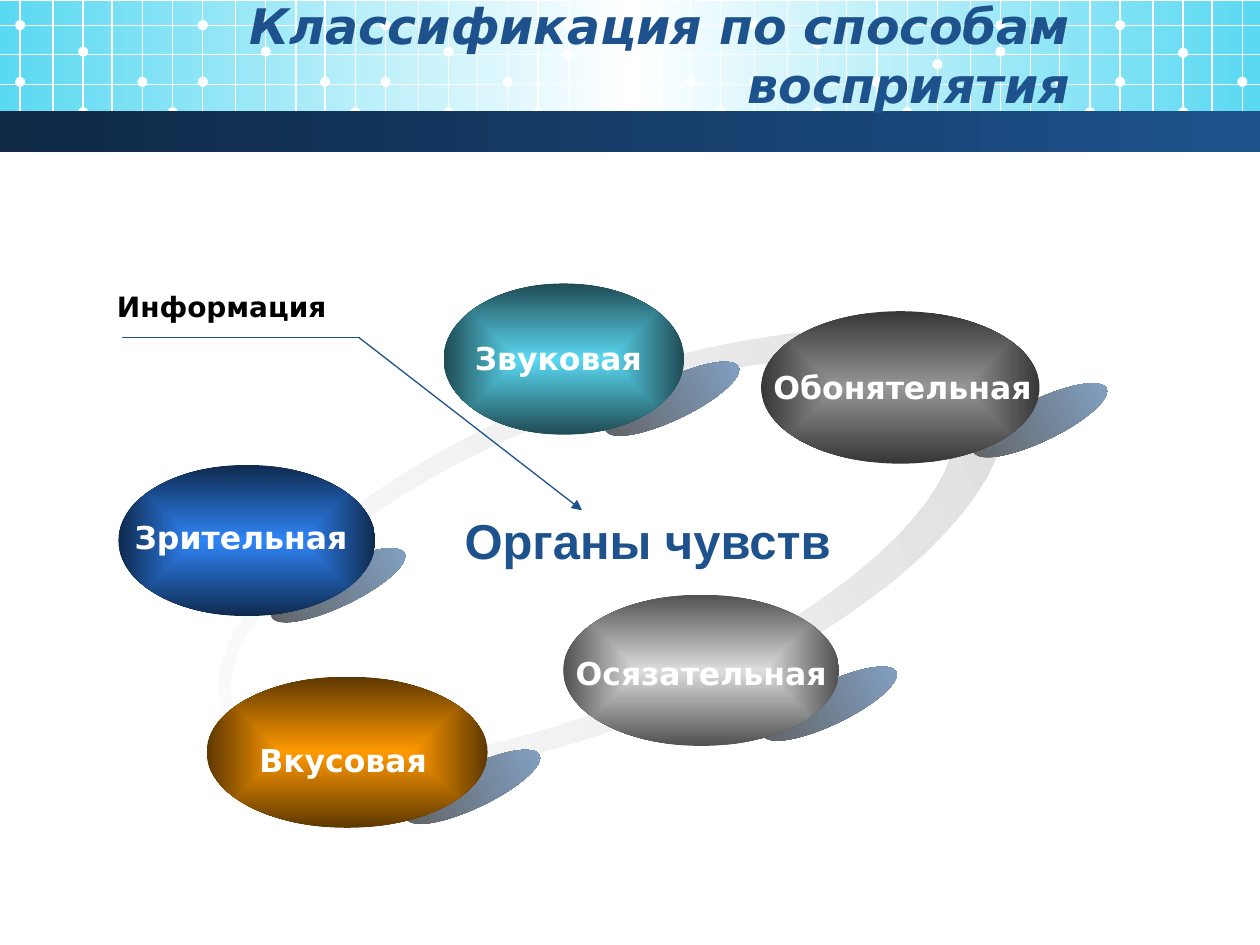
import math
from pptx import Presentation
from pptx.dml.color import RGBColor
from pptx.enum.shapes import MSO_CONNECTOR, MSO_SHAPE
from pptx.enum.text import MSO_ANCHOR, MSO_AUTO_SIZE, PP_ALIGN
from pptx.oxml.ns import qn
from pptx.util import Inches, Pt
from lxml import etree

OVAL, RECTANGLE = MSO_SHAPE.OVAL, MSO_SHAPE.RECTANGLE
STRAIGHT = MSO_CONNECTOR.STRAIGHT
LEFT, CENTER, RIGHT = PP_ALIGN.LEFT, PP_ALIGN.CENTER, PP_ALIGN.RIGHT
TOP, MIDDLE = MSO_ANCHOR.TOP, MSO_ANCHOR.MIDDLE
NO_FIT = MSO_AUTO_SIZE.NONE

WHITE = RGBColor(0xFF, 0xFF, 0xFF)
BLACK = RGBColor(0x00, 0x00, 0x00)
NAVY = RGBColor(0x1D, 0x52, 0x8D)
CYAN = RGBColor(0x5A, 0xD9, 0xF2)
BLUE = RGBColor(0x2F, 0x85, 0xF7)
ORANGE = RGBColor(0xFF, 0x99, 0x00)
SILVER = RGBColor(0xDD, 0xDD, 0xDD)
GRAY = RGBColor(0x96, 0x96, 0x96)
PALE = RGBColor(0xF5, 0xF5, 0xF5)
SHADOW_DARK = RGBColor(0x5F, 0x5F, 0x5F)
SHADOW_LIGHT = RGBColor(0x84, 0xA5, 0xCA)

TITLE = "Классификация по способам восприятия"
CENTER_LABEL = "Органы чувств"
SOURCE_LABEL = "Информация"
SENSES = [
    ("Звуковая", CYAN, 35, (3.52, 2.25, 1.91, 1.2), (3.67, 2.64, 1.57, 0.4), (4.75, 3)),
    ("Зрительная", BLUE, 32, (0.94, 3.69, 2.04, 1.2), (0.97, 4.06, 1.91, 0.4), (2.1, 4.48)),
    ("Вкусовая", ORANGE, 37, (1.64, 5.37, 2.23, 1.2), (1.96, 5.83, 1.57, 0.4), (3.17, 6.08)),
    ("Осязательная", SILVER, 37, (4.47, 4.72, 2.19, 1.2), (4.47, 5.14, 2.23, 0.4), (6, 5.42)),
    ("Обонятельная", GRAY, 37, (6.04, 2.47, 2.21, 1.21), (6.04, 2.87, 2.28, 0.4), (7.67, 3.17)),
]

TILES = [(0.16, 0.37, 0.61), (3.06, 0.37, 0.39), (5.99, 0.31, 0.47), (8.89, 0.38, 0.61)]
COLUMNS = [0, 0.26, 0.5, 0.73, 0.97, 1.21, 1.45, 1.71, 1.95, 2.19, 2.42, 2.66]
ROWS = [0.2, 0.43, 0.67, 0.89]
DOT = 0.08
RING_CENTER = (4.85, 4.39)
RING_TILT = -22.6
RING_OUTLINES = [(0, 0, 3.33, 1.32), (-0.16, -0.01, 3.07, 1.14)]
RING_POINTS = 80


def add_gradient(shape, stops, centered=False):
    shape.fill.gradient()
    gradient = shape._element.spPr.find(qn("a:gradFill"))
    gradient.clear()
    gradient.set("rotWithShape", "1")
    stop_list = etree.SubElement(gradient, qn("a:gsLst"))
    for position, color, changes in stops:
        stop = etree.SubElement(stop_list, qn("a:gs"), pos=str(position * 1000))
        tint = etree.SubElement(stop, qn("a:srgbClr"), val=str(color))
        for name, percent in changes:
            change = etree.SubElement(tint, qn("a:" + name))
            if percent is not None:
                change.set("val", str(percent * 1000))
    if centered:
        route = etree.SubElement(gradient, qn("a:path"))
        route.set("path", "shape")
        edges = dict.fromkeys("ltrb", "50000")
        etree.SubElement(route, qn("a:fillToRect"), **edges)
    else:
        etree.SubElement(gradient, qn("a:lin"), ang="0", scaled="1")


def shade(percent):
    return [("gamma", None), ("shade", percent), ("invGamma", None)]


def add_shape(page, kind, area, color=None):
    shape = page.shapes.add_shape(kind, *map(Inches, area))
    shape.shadow.inherit = False
    shape.line.fill.background()
    if color is not None:
        shape.fill.solid()
        shape.fill.fore_color.rgb = color
    return shape


def add_line(page, start, end, color, arrow=False):
    line = page.shapes.add_connector(STRAIGHT, *map(Inches, start + end))
    line.line.color.rgb = color
    line.line.width = Pt(0.75)
    if arrow:
        etree.SubElement(line.line._get_or_add_ln(), qn("a:tailEnd"), type="triangle")
    etree.SubElement(line._element.spPr, qn("a:effectLst"))


def write_text(box, text, size=18, color=WHITE, font="DejaVu Sans", align=LEFT,
               anchor=TOP, wrap=True, italic=False):
    frame = box.text_frame
    frame.auto_size = NO_FIT
    frame.word_wrap = wrap
    frame.vertical_anchor = anchor
    para = frame.paragraphs[0]
    para.alignment = align
    span = para.add_run()
    span.text = text
    span.font.name = font
    span.font.size = Pt(size)
    span.font.bold = True
    span.font.italic = italic
    span.font.color.rgb = color


def add_label(page, area, text, **style):
    write_text(page.shapes.add_textbox(*map(Inches, area)), text, **style)


def draw_header(page):
    backdrop = add_shape(page, RECTANGLE, (0, 0.01, 10, 1.02))
    add_gradient(backdrop, [(0, CYAN, []), (50, WHITE, []), (100, CYAN, [])])
    for start, upper, lower in TILES:
        dots = [(0, 0.61), (0, 0.16), (0.5, upper), (0.5, 0.85), (0.97, 0.61),
                (1.21, 0.85), (1.45, lower), (1.45, 0.16), (1.95, 0.37),
                (1.95, 0.16), (2.42, 0.61), (2.66, 0.85)]
        for offset in COLUMNS:
            if start + offset < 10:
                add_line(page, (start + offset, 0), (start + offset, 1.1), WHITE)
        for offset, top in dots:
            if start + offset < 10:
                add_shape(page, OVAL, (start + offset - DOT / 2, top, DOT, DOT), WHITE)
    for height in ROWS:
        add_line(page, (0, height), (10, height), WHITE)
    band = add_shape(page, RECTANGLE, (0, 0.88, 10, 0.33))
    add_gradient(band, [(0, NAVY, shade(49)), (100, NAVY, [])])


def draw_title(page):
    title = page.shapes.title
    page.shapes._spTree.append(title._element)
    title.left, title.top, title.width, title.height = map(Inches, (0.12, 0, 8.47, 0.87))
    write_text(title, TITLE, size=28, color=NAVY, align=RIGHT, anchor=MIDDLE, italic=True)


def draw_ring(page):
    outlines = []
    for shift_x, shift_y, radius_x, radius_y in RING_OUTLINES:
        angles = [2 * math.pi * step / RING_POINTS for step in range(RING_POINTS)]
        outlines.append([(Inches(RING_CENTER[0] + shift_x + radius_x * math.cos(angle)),
                          Inches(RING_CENTER[1] + shift_y + radius_y * math.sin(angle)))
                         for angle in angles])
    outer, inner = outlines
    builder = page.shapes.build_freeform(*outer[0])
    builder.add_line_segments(outer[1:])
    builder.move_to(*inner[0])
    builder.add_line_segments(inner[1:])
    ring = builder.convert_to_shape()
    ring.shadow.inherit = False
    ring.line.fill.background()
    ring.rotation = RING_TILT
    add_gradient(ring, [(0, PALE, [("alpha", 36)]), (100, SILVER, [])])


def draw_senses(page):
    for *_, corner in SENSES:
        shadow = add_shape(page, OVAL, corner + (1.17, 0.33))
        shadow.rotation = -25.7
        add_gradient(shadow, [(0, SHADOW_DARK, []), (100, SHADOW_LIGHT, [])])
    for _, color, percent, area, _, _ in SENSES:
        oval = add_shape(page, OVAL, area)
        add_gradient(oval, [(0, color, []), (100, color, shade(percent))], centered=True)
    for text, _, _, _, area, _ in SENSES:
        add_label(page, area, text, wrap=False)


def main():
    deck = Presentation()
    deck.slide_width, deck.slide_height = Inches(10), Inches(7.5)
    page = deck.slides.add_slide(deck.slide_layouts[5])
    draw_header(page)
    draw_title(page)
    draw_ring(page)
    draw_senses(page)
    add_label(page, (3.39, 4, 3.5, 0.57), CENTER_LABEL, size=28, color=NAVY,
              font="Arial", align=CENTER)
    add_line(page, (2.85, 2.68), (4.62, 4.05), NAVY, arrow=True)
    add_line(page, (2.86, 2.68), (0.97, 2.68), NAVY)
    add_label(page, (0.83, 2.25, 2.25, 0.37), SOURCE_LABEL, size=16, color=BLACK)
    deck.save("out.pptx")


if __name__ == "__main__":
    main()
